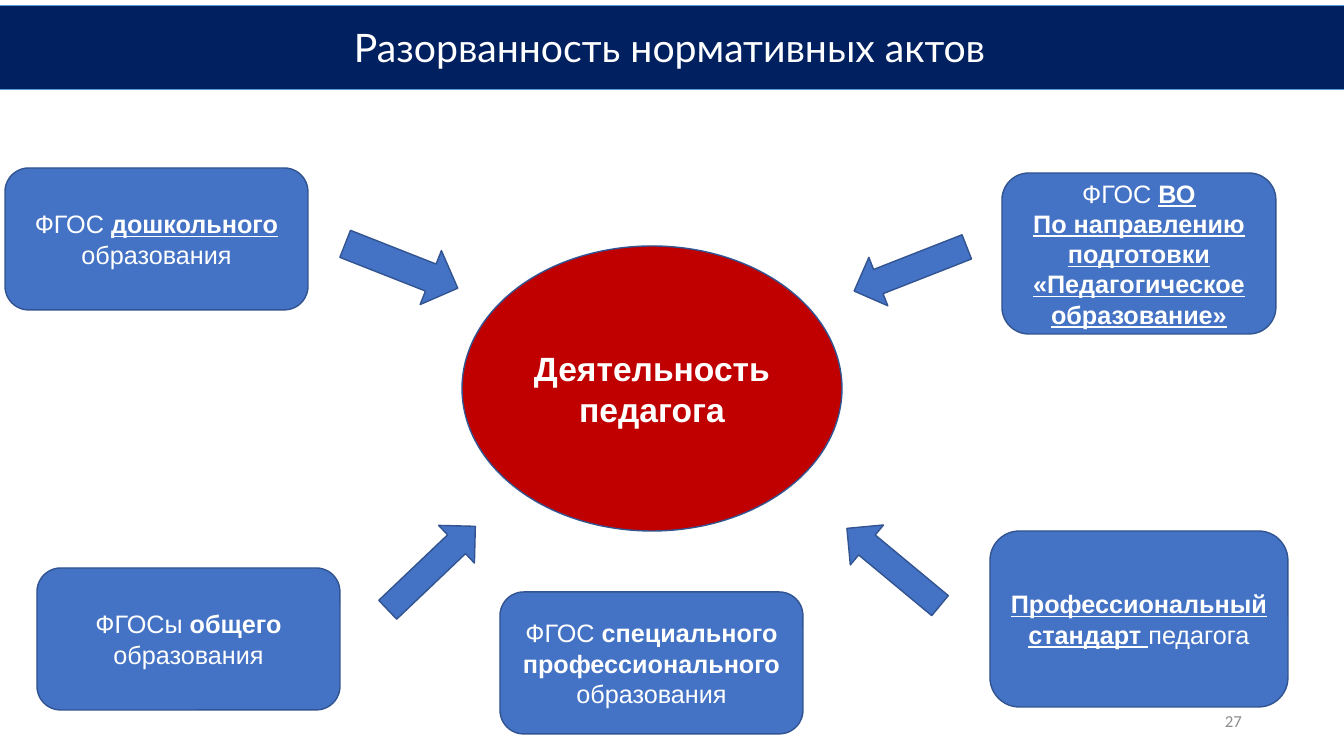
import dataclasses

import pptx
import pptx.dml.color
import pptx.enum.shapes
import pptx.enum.text
import pptx.util

SHAPES = pptx.enum.shapes.MSO_SHAPE
ALIGN = pptx.enum.text.PP_ALIGN
PIXELS_PER_INCH = 100.8


@dataclasses.dataclass(frozen=True)
class Theme:
    band: str = "002060"
    band_line: str = "5B9BD5"
    box: str = "4472C4"
    outline: str = "325491"
    centre: str = "C00000"
    light: str = "FFFFFF"
    muted: str = "8C8C8C"
    title_size: int = 28
    centre_size: int = 24
    box_size: int = 18
    number_size: int = 12
    title_font: str = "Lato"
    body_font: str = "Arial"
    number_font: str = "Calibri"


THEME = Theme()

STANDARDS = [
    ((37, 568, 303, 142), [[("ФГОСы ", ""), ("общего", "b"), (" образования", "")]]),
    ((1002, 173, 274, 161), [
        [("ФГОС ", ""), ("ВО", "bu")],
        [("По направлению подготовки «Педагогическое образование»", "bu")],
    ]),
    ((990, 531, 298, 176), [[("Профессиональный стандарт ", "bu"), ("педагога", "")]]),
    ((5, 168, 303, 142), [[("ФГОС ", ""), ("дошкольного", "bu"), (" образования", "")]]),
    ((500, 592, 303, 142), [
        [("ФГОС ", ""), ("специального профессионального", "b"), (" образования", "")],
    ]),
]

ARROWS = [
    ((850, 243, 121, 52), 338.6),
    ((341, 237, 121, 58), 201.5),
    ((833, 541, 121, 52), 39.7),
    ((371, 542, 121, 52), 136.4),
]


def px(length):
    return pptx.util.Emu(round(length * 914400 / PIXELS_PER_INCH))


def rgb(color):
    return pptx.dml.color.RGBColor.from_string(color)


def paint(shape, fill, line, width=1):
    shape.fill.solid()
    shape.fill.fore_color.rgb = rgb(fill)
    shape.line.color.rgb = rgb(line)
    shape.line.width = pptx.util.Pt(width)


def write_text(shape, paragraphs, size, font=THEME.body_font, color=THEME.light, align=ALIGN.CENTER):
    frame = shape.text_frame
    frame.word_wrap = True
    frame.auto_size = pptx.enum.text.MSO_AUTO_SIZE.NONE
    frame.vertical_anchor = pptx.enum.text.MSO_ANCHOR.MIDDLE
    for index, runs in enumerate(paragraphs):
        paragraph = frame.add_paragraph() if index else frame.paragraphs[0]
        paragraph.alignment = align
        paragraph.line_spacing = 1.0
        for text, style in runs:
            run = paragraph.add_run()
            run.text = text
            run.font.name = font
            run.font.size = pptx.util.Pt(size)
            run.font.color.rgb = rgb(color)
            run.font.bold = "b" in style
            run.font.underline = "u" in style


def add_figure(slide, kind, box, fill=THEME.box, rotation=0):
    shape = slide.shapes.add_shape(kind, *map(px, box))
    shape.shadow.inherit = False
    shape.rotation = rotation
    paint(shape, fill, THEME.outline)
    return shape


def add_title(slide, text):
    title = slide.shapes.title
    title.left, title.top, title.width, title.height = map(px, (-6, 5, 1351, 84))
    paint(title, THEME.band, THEME.band_line, 0.5)
    write_text(title, [[(text, "")]], size=THEME.title_size, font=THEME.title_font)


def add_standard(slide, box, paragraphs):
    shape = add_figure(slide, SHAPES.ROUNDED_RECTANGLE, box)
    write_text(shape, paragraphs, size=THEME.box_size)


def add_centre(slide):
    ellipse = add_figure(slide, SHAPES.OVAL, (462, 246, 380, 285), fill=THEME.centre)
    lines = [[("Деятельность", "b")], [("педагога", "b")]]
    write_text(ellipse, lines, size=THEME.centre_size)


def add_page_number(slide, number):
    label = slide.shapes.add_textbox(*map(px, (950, 701, 302, 40)))
    write_text(label, [[(number, "")]], size=THEME.number_size, font=THEME.number_font,
               color=THEME.muted, align=ALIGN.RIGHT)


def main():
    presentation = pptx.Presentation()
    presentation.slide_width = px(1344)
    presentation.slide_height = px(756)
    slide = presentation.slides.add_slide(presentation.slide_layouts.get_by_name("Title Only"))
    add_title(slide, "Разорванность нормативных актов")
    for box, rotation in ARROWS:
        add_figure(slide, SHAPES.LEFT_ARROW, box, rotation=rotation)
    for box, paragraphs in STANDARDS:
        add_standard(slide, box, paragraphs)
    add_centre(slide)
    add_page_number(slide, "27")
    presentation.save("out.pptx")


if __name__ == "__main__":
    main()
